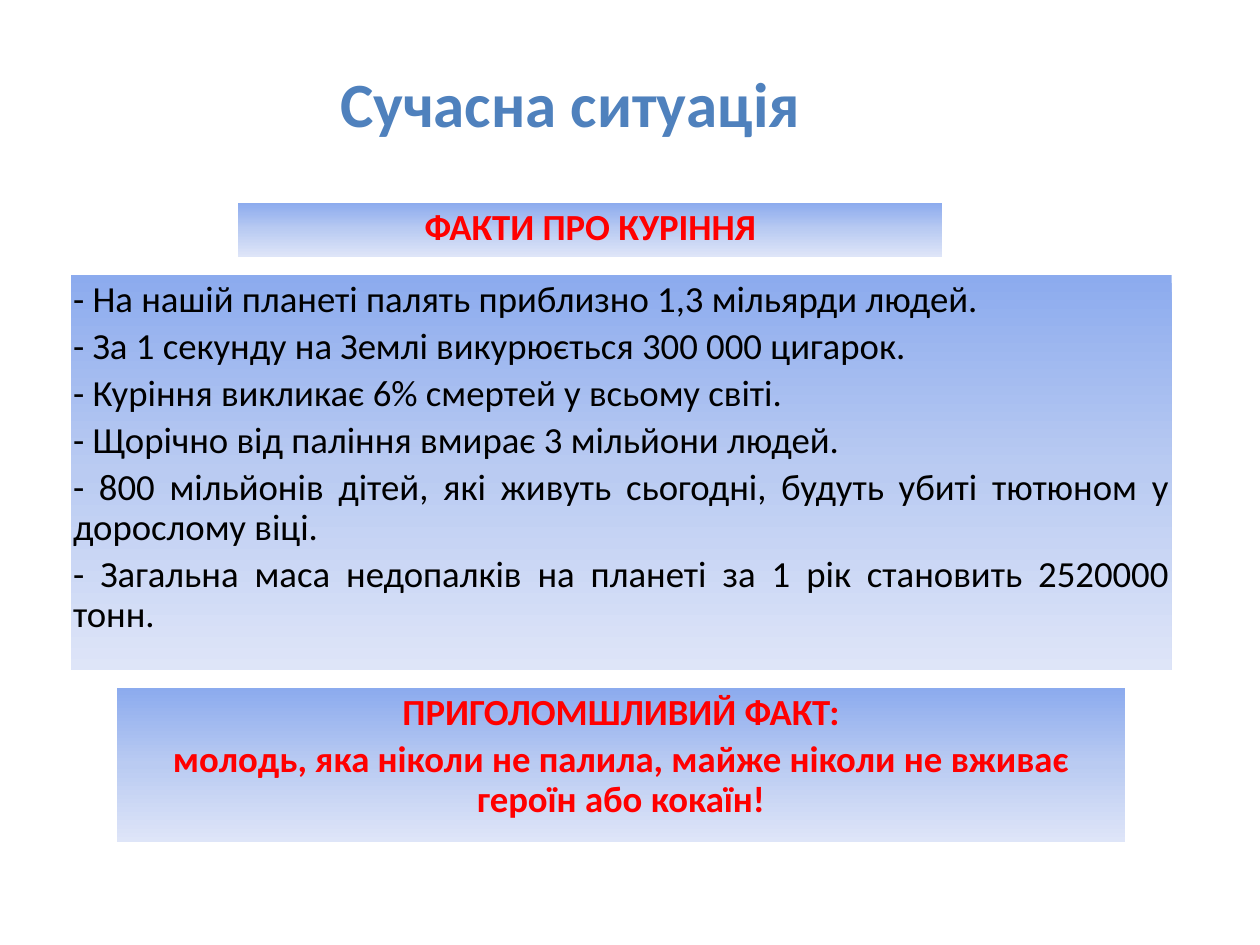
import copy

import pptx
import pptx.dml.color
import pptx.enum.shapes
import pptx.enum.text
import pptx.oxml
import pptx.oxml.ns
import pptx.util
from pptx.util import Inches

ALIGN = pptx.enum.text.PP_ALIGN
ANCHOR = pptx.enum.text.MSO_ANCHOR
GRADIENT = ["8CABEE", "BACBF2", "DEE5F8"]
FACTS = [
    "- На нашій планеті палять приблизно 1,3 мільярди людей.",
    "- За 1 секунду на Землі викурюється 300 000 цигарок.",
    "- Куріння викликає 6% смертей у всьому світі.",
    "- Щорічно від паління вмирає 3 мільйони людей.",
    "- 800 мільйонів дітей, які живуть сьогодні, будуть убиті тютюном у дорослому віці.",
    "- Загальна маса недопалків на планеті за 1 рік становить 2520000 тонн.",
]
SHOCKING_FACT = [
    "ПРИГОЛОМШЛИВИЙ ФАКТ:",
    "молодь, яка ніколи не палила, майже ніколи не вживає героїн або кокаїн!",
]


def color(hex_string):
    return pptx.dml.color.RGBColor.from_string(hex_string)


def set_box(shape, box, lines, size, font_color, bold, align, anchor, margins):
    """Place a shape and fill it with formatted, unbulleted paragraphs."""
    shape.left, shape.top, shape.width, shape.height = [Inches(n) for n in box]
    frame = shape.text_frame
    frame.text = "\n".join(lines)
    frame.word_wrap = True
    frame.auto_size = pptx.enum.text.MSO_AUTO_SIZE.NONE
    frame.vertical_anchor = anchor
    (frame.margin_left, frame.margin_top,
     frame.margin_right, frame.margin_bottom) = [Inches(n) for n in margins]
    for index, paragraph in enumerate(frame.paragraphs):
        paragraph.alignment = align
        paragraph.space_before = pptx.util.Pt(4.2 if index else 0)
        properties = paragraph._p.get_or_add_pPr()
        properties.set("marL", "0")
        properties.set("indent", "0")
        properties.append(pptx.oxml.parse_xml(
            f"<a:buNone {pptx.oxml.ns.nsdecls('a')}/>"))
        for run in paragraph.runs:
            run.font.name = "Calibri"
            run.font.size = pptx.util.Pt(size)
            run.font.bold = bold
            run.font.color.rgb = color(font_color)


presentation = pptx.Presentation()
presentation.slide_width = Inches(10)
presentation.slide_height = Inches(7.5)
slide = presentation.slides.add_slide(presentation.slide_layouts[1])

set_box(slide.shapes.title, (0.2, 0.47, 8.65, 0.64), ["Сучасна ситуація"],
        36, "4F81BD", True, ALIGN.CENTER, ANCHOR.BOTTOM, (0, 0.05, 0, 0))

panels = [
    (slide.placeholders[1], (0.56, 2.18, 8.74, 3.14), FACTS,
     "000000", False, ALIGN.JUSTIFY),
    (None, (1.89, 1.61, 5.59, 0.43), ["ФАКТИ ПРО КУРІННЯ"],
     "FF0000", True, ALIGN.CENTER),
    (None, (0.93, 5.46, 8, 1.22), SHOCKING_FACT,
     "FF0000", True, ALIGN.CENTER),
]
for panel, box, lines, font_color, bold, align in panels:
    if panel is None:
        panel = slide.shapes.add_shape(
            pptx.enum.shapes.MSO_SHAPE.RECTANGLE, 0, 0, 0, 0)
        panel.shadow.inherit = False
        panel.line.fill.background()
    set_box(panel, box, lines, 21, font_color, bold, align,
            ANCHOR.TOP, (0.02, 0.05, 0.02, 0.05))
    for paragraph in panel.text_frame.paragraphs:
        paragraph.line_spacing = 0.9

    panel.fill.gradient()
    panel.fill.gradient_angle = 270
    stop_list = panel._element.spPr.find(
        ".//" + pptx.oxml.ns.qn("a:gsLst"))
    middle_stop = copy.deepcopy(stop_list[0])
    middle_stop.set("pos", "50000")
    stop_list.insert(1, middle_stop)
    for stop, hex_string in zip(panel.fill.gradient_stops, GRADIENT):
        stop.color.rgb = color(hex_string)

presentation.save("out.pptx")
